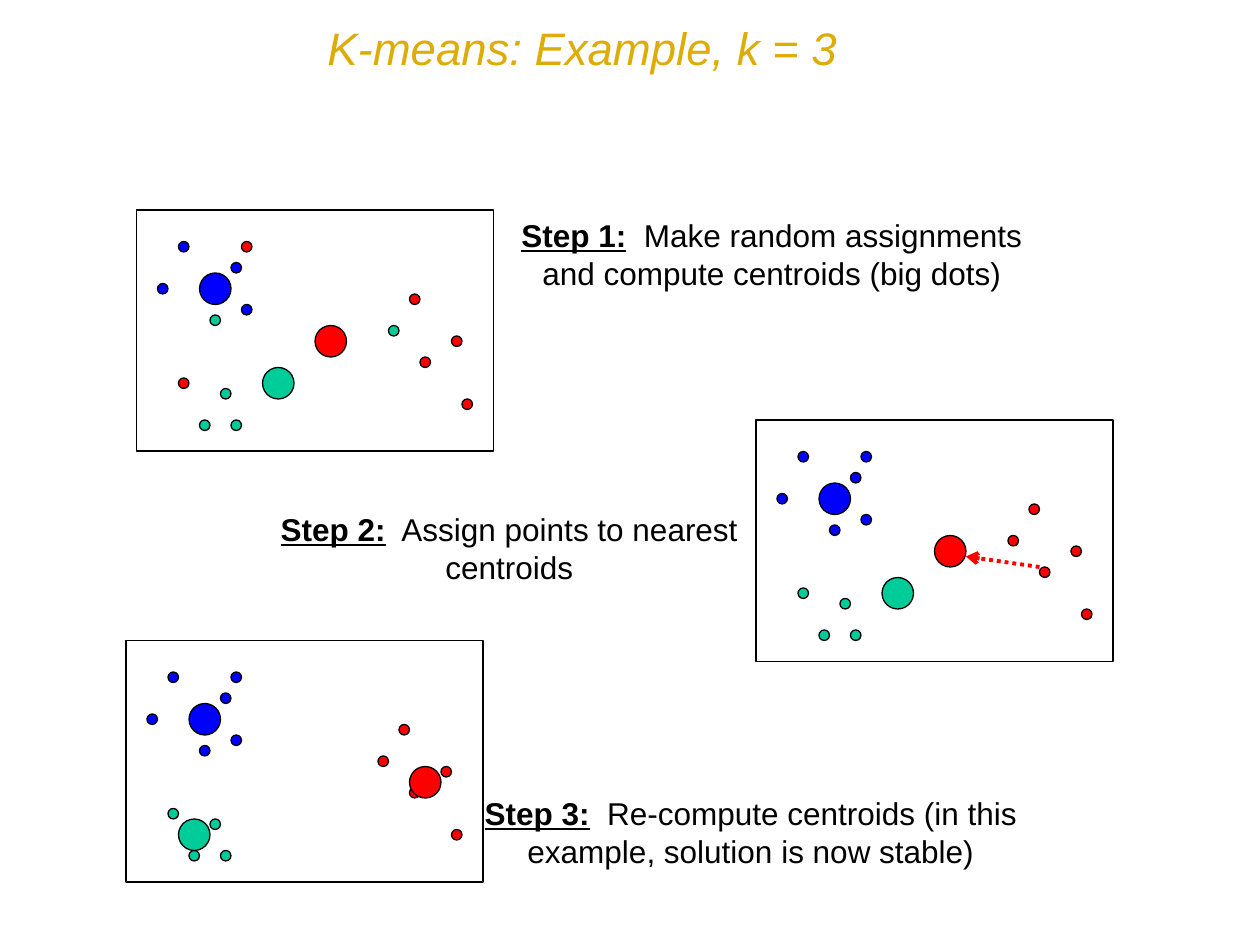
from dataclasses import dataclass

from lxml import etree
from pptx import Presentation
from pptx import util as u
from pptx.dml.color import RGBColor
from pptx.enum import dml, shapes, text
from pptx.oxml.ns import qn

PX = u.Inches(1) // 96
GRID = 8  # px between grid lines inside a panel


@dataclass(frozen=True)
class Theme:
    font: str = "Arial"
    title: RGBColor = RGBColor.from_string("DEAC06")
    ink: RGBColor = RGBColor.from_string("000000")
    blue: RGBColor = RGBColor.from_string("0000FF")
    green: RGBColor = RGBColor.from_string("00CC99")
    red: RGBColor = RGBColor.from_string("FF0000")
    title_size: int = 26
    body_size: int = 18


THEME = Theme()
CLUSTERS = {"b": THEME.blue, "g": THEME.green, "r": THEME.red}
PANEL_SIZE = (272, 184)
CAPTION_SIZE = (440, 67)
DOT, CENTROID = 1, 3  # diameters in grid steps

# Data points in grid steps from the panel's corner, the same in every step
POINTS = [(4, 3), (7, 10), (9, 5), (10, 9), (2, 7), (26, 8), (30, 12), (24, 11),
          (27, 14), (10, 3), (31, 18), (4, 16), (6, 20), (9, 20), (8, 17)]
RANDOM_CENTROIDS = {"g": (12, 15), "b": (6, 6), "r": (17, 11)}
STABLE_CENTROIDS = {"g": (5, 17), "b": (6, 6), "r": (27, 12)}
NEAREST = "bbbbbrrrrbrgggg"

# Panel corner, point clusters, centroids, arrow, caption corner, label, wording
STEPS = [
    ((104, 160), "bgbbbrrgrrrrggg", RANDOM_CENTROIDS, None, (368, 160),
     "Step 1:", "  Make random assignments and compute centroids (big dots)"),
    ((576, 320), NEAREST, RANDOM_CENTROIDS, ((27, 14), (20, 13)), (168, 384),
     "Step 2:", "  Assign points to nearest centroids"),
    ((96, 488), NEAREST, STABLE_CENTROIDS, None, (352, 600),
     "Step 3:", "  Re-compute centroids (in this example, solution is now stable)"),
]


def to_emu(*lengths):
    return [length * PX for length in lengths]


def on_grid(corner, position):
    return [start + step * GRID for start, step in zip(corner, position)]


def add_outlined(slide, kind, box, fill, line_width):
    shape = slide.shapes.add_shape(kind, *to_emu(*box))
    shape.shadow.inherit = False
    if fill is None:
        shape.fill.background()
    else:
        shape.fill.solid()
        shape.fill.fore_color.rgb = fill
    shape.line.color.rgb = THEME.ink
    shape.line.width = u.Pt(line_width)


def add_circle(slide, corner, position, diameter, fill):
    size = diameter * GRID
    box = (*on_grid(corner, position), size, size)
    add_outlined(slide, shapes.MSO_SHAPE.OVAL, box, fill, 0.75)


def add_arrow(slide, corner, start, end):
    ends = to_emu(*on_grid(corner, start), *on_grid(corner, end))
    arrow = slide.shapes.add_connector(shapes.MSO_CONNECTOR.STRAIGHT, *ends)
    arrow.line.color.rgb = THEME.red
    arrow.line.width = u.Pt(2.25)
    arrow.line.dash_style = dml.MSO_LINE.ROUND_DOT
    properties = arrow.element.spPr
    etree.SubElement(properties.find(qn("a:ln")), qn("a:tailEnd"), type="arrow")
    etree.SubElement(properties, qn("a:effectLst"))


def add_panel(slide, corner, clusters, centroids, arrow):
    """Scatter plot of the points, with one big dot for each centroid."""
    add_outlined(slide, shapes.MSO_SHAPE.RECTANGLE, (*corner, *PANEL_SIZE), None, 1)
    for position, cluster in zip(POINTS, clusters):
        add_circle(slide, corner, position, DOT, CLUSTERS[cluster])
    for cluster, position in centroids.items():
        add_circle(slide, corner, position, CENTROID, CLUSTERS[cluster])
    if arrow:
        add_arrow(slide, corner, *arrow)


def add_text_frame(slide, box):
    frame = slide.shapes.add_textbox(*to_emu(*box)).text_frame
    frame.word_wrap = True
    frame.vertical_anchor = text.MSO_ANCHOR.MIDDLE
    return frame


def add_run(paragraph, wording, size, color):
    run = paragraph.add_run()
    run.text = wording
    run.font.name = THEME.font
    run.font.size = u.Pt(size)
    run.font.color.rgb = color
    return run


def add_title(slide, box, wording):
    paragraph = add_text_frame(slide, box).paragraphs[0]
    add_run(paragraph, wording, THEME.title_size, THEME.title).font.italic = True


def add_caption(slide, box, label, wording):
    frame = add_text_frame(slide, box)
    frame.auto_size = text.MSO_AUTO_SIZE.SHAPE_TO_FIT_TEXT
    paragraph = frame.paragraphs[0]
    paragraph.alignment = text.PP_ALIGN.CENTER
    label_run = add_run(paragraph, label, THEME.body_size, THEME.ink)
    label_run.font.bold = True
    label_run.font.underline = True
    add_run(paragraph, wording, THEME.body_size, THEME.ink)


def main():
    presentation = Presentation()
    presentation.slide_width, presentation.slide_height = to_emu(960, 720)
    slide = presentation.slides.add_slide(presentation.slide_layouts[6])
    add_title(slide, (240, 0, 678, 72), "K-means: Example, k = 3")
    for corner, clusters, centroids, arrow, caption_corner, label, wording in STEPS:
        add_panel(slide, corner, clusters, centroids, arrow)
        add_caption(slide, (*caption_corner, *CAPTION_SIZE), label, wording)
    presentation.save("out.pptx")


if __name__ == "__main__":
    main()
